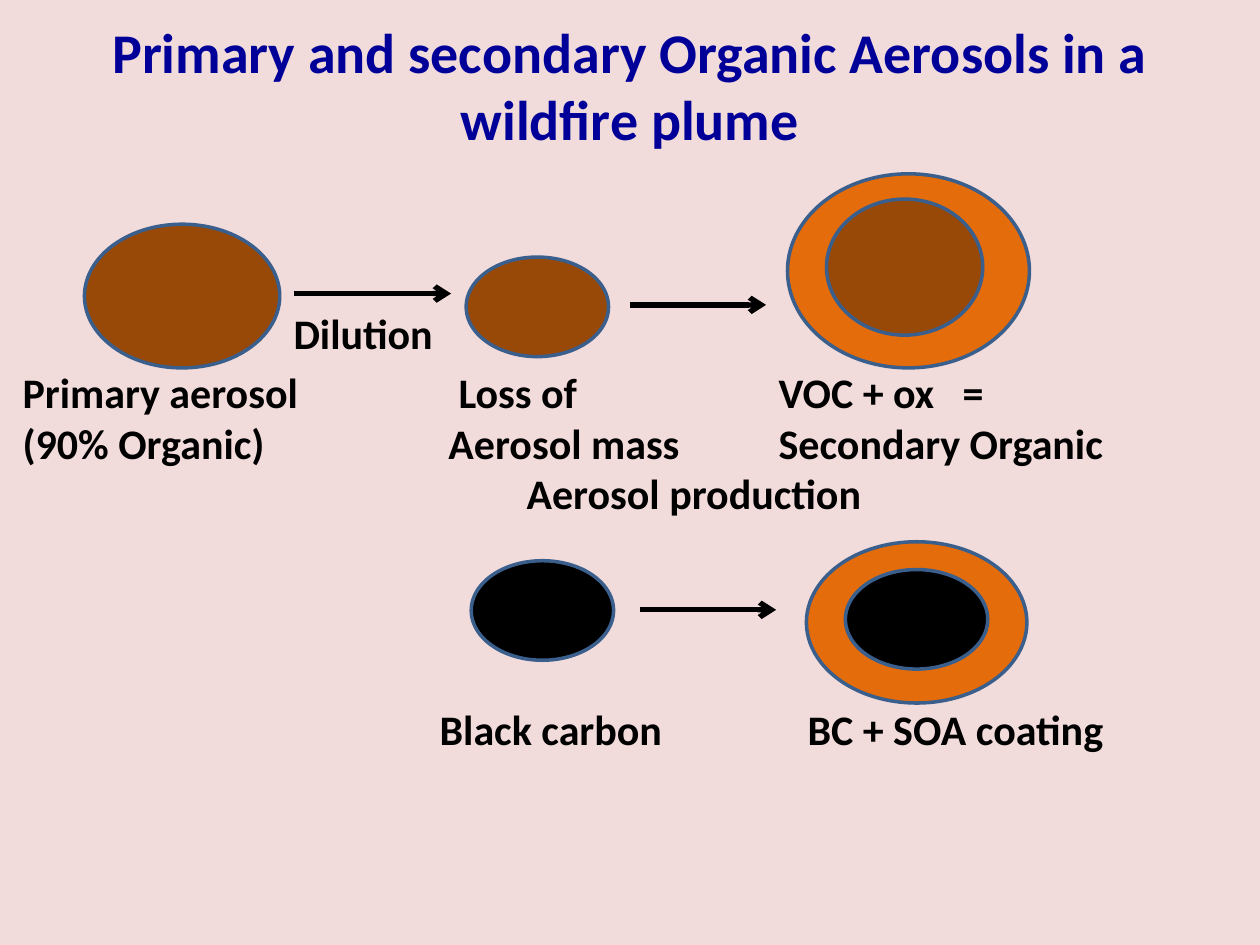
from lxml import etree
from pptx import Presentation
from pptx import util as u
from pptx.dml.color import RGBColor
from pptx.enum import shapes, text
from pptx.oxml import ns

BACKGROUND = RGBColor(0xF2, 0xDC, 0xDB)
NAVY = RGBColor(0x00, 0x00, 0x99)
BLACK = RGBColor(0x00, 0x00, 0x00)
BROWN = RGBColor(0x98, 0x48, 0x07)
ORANGE = RGBColor(0xE4, 0x6C, 0x0A)
OUTLINE = RGBColor(0x3A, 0x5F, 0x8C)

WIDTH, HEIGHT = u.Inches(10), u.Inches(7.5)
COLUMNS, ROWS = 100, 75
FONT = "Calibri"


def across(columns):
    return round(WIDTH * columns / COLUMNS)


def down(rows):
    return round(HEIGHT * rows / ROWS)


def place(box, left, top, width, height):
    return (across(box[0] + left), down(box[1] + top),
            across(width), down(height))


def add_text(page, bounds, words, size=24, color=BLACK,
             align=text.PP_ALIGN.LEFT, anchor=text.MSO_ANCHOR.TOP,
             first_indent=0, tab=None):
    frame = page.shapes.add_textbox(*bounds).text_frame
    frame.word_wrap = True
    frame.vertical_anchor = anchor
    frame.margin_left = frame.margin_right = 0
    frame.margin_top = frame.margin_bottom = 0
    for index, line in enumerate(words.split("\n")):
        para = frame.add_paragraph() if index else frame.paragraphs[0]
        para.alignment = align
        properties = para._p.get_or_add_pPr()
        if first_indent and index == 0:
            properties.set("indent", str(across(first_indent)))
        if tab and "\t" in line:
            stops = etree.SubElement(properties, ns.qn("a:tabLst"))
            etree.SubElement(stops, ns.qn("a:tab"),
                             pos=str(across(tab)), algn="l")
        span = para.add_run()
        span.text = line
        span.font.name = FONT
        span.font.size = u.Pt(size)
        span.font.bold = True
        span.font.color.rgb = color


def add_particle(page, bounds, color):
    particle = page.shapes.add_shape(shapes.MSO_SHAPE.OVAL, *bounds)
    particle.shadow.inherit = False
    particle.fill.solid()
    particle.fill.fore_color.rgb = color
    particle.line.color.rgb = OUTLINE
    particle.line.width = u.Pt(2)


def add_arrow(page, bounds):
    left, top, width, height = bounds
    arrow = page.shapes.add_connector(
        shapes.MSO_CONNECTOR.STRAIGHT, left, top, left + width, top + height)
    arrow.line.color.rgb = BLACK
    arrow.line.width = u.Pt(3)
    etree.SubElement(arrow.line._get_or_add_ln(), ns.qn("a:tailEnd"),
                     type="arrow")
    etree.SubElement(arrow._element.spPr, ns.qn("a:effectLst"))


def add_title(page, box):
    add_text(page, place(box, 0, 0, box[2], box[3]),
             "Primary and secondary Organic Aerosols in a wildfire plume",
             size=32, color=NAVY, align=text.PP_ALIGN.CENTER,
             anchor=text.MSO_ANCHOR.MIDDLE)


def add_organic_aerosol(page, box):
    particles = [
        ((4.9, 4, 15.5, 11.4), BROWN),
        ((35.2, 6.6, 11.3, 7.9), BROWN),
        ((60.7, 0, 19.2, 15.4), ORANGE),
        ((63.8, 2, 12.4, 10.8), BROWN),
    ]
    for area, color in particles:
        add_particle(page, place(box, *area), color)
    for area in [(21.5, 9.5, 12.5, 0), (48.2, 10.4, 10.8, 0)]:
        add_arrow(page, place(box, *area))
    labels = [
        ((21.5, 10.6, 13, 4.1), "Dilution", {}),
        ((0, 15.3, 26, 8.2), "Primary aerosol\n(90% Organic)", {}),
        ((33.8, 15.3, 22, 8.2), "Loss of\nAerosol mass",
         {"first_indent": 0.8}),
        ((60, 15.3, 30, 8.2), "VOC + ox\t=\nSecondary Organic",
         {"tab": 14.6}),
        ((40, 23.3, 32, 4.1), "Aerosol production", {}),
    ]
    for area, words, layout in labels:
        add_text(page, place(box, *area), words, **layout)


def add_black_carbon(page, box):
    particles = [
        ((2.5, 1.5, 11.3, 7.9), BLACK),
        ((29.1, 0, 17.5, 12.8), ORANGE),
        ((32.2, 2.2, 11.3, 7.9), BLACK),
    ]
    for area, color in particles:
        add_particle(page, place(box, *area), color)
    add_arrow(page, place(box, 15.9, 5.4, 10.8, 0))
    add_text(page, place(box, 0, 12.8, 22, 4.1), "Black carbon")
    add_text(page, place(box, 29.2, 12.8, 28, 4.1), "BC + SOA coating")


def main():
    deck = Presentation()
    deck.slide_width, deck.slide_height = WIDTH, HEIGHT
    page = deck.slides.add_slide(deck.slide_layouts[6])
    page.background.fill.solid()
    page.background.fill.fore_color.rgb = BACKGROUND
    add_title(page, (6.1, 0.8, 87.8, 11.8))
    add_organic_aerosol(page, (1.8, 13.8, 90, 28))
    add_black_carbon(page, (34.9, 43, 57, 17))
    deck.save("out.pptx")


if __name__ == "__main__":
    main()
